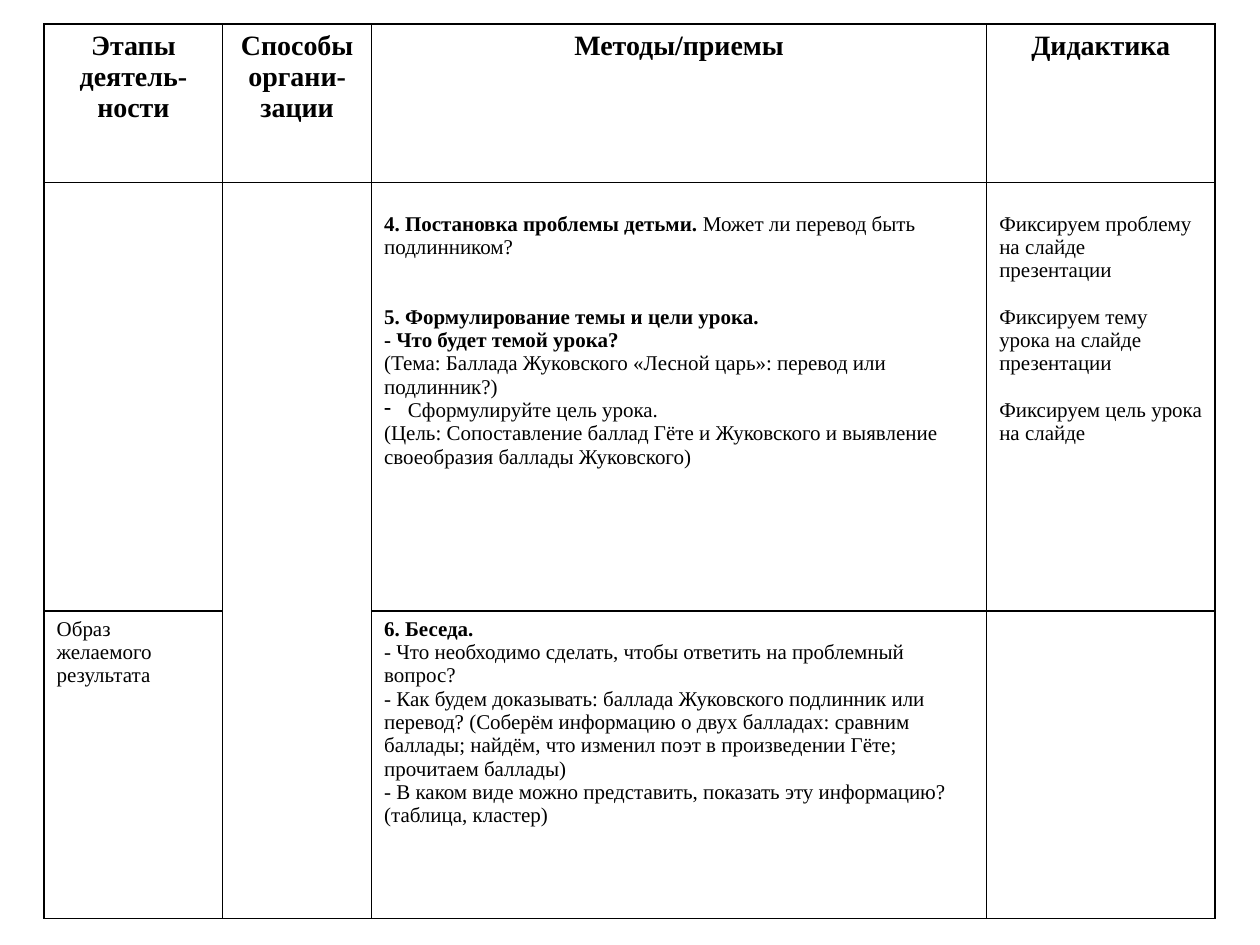
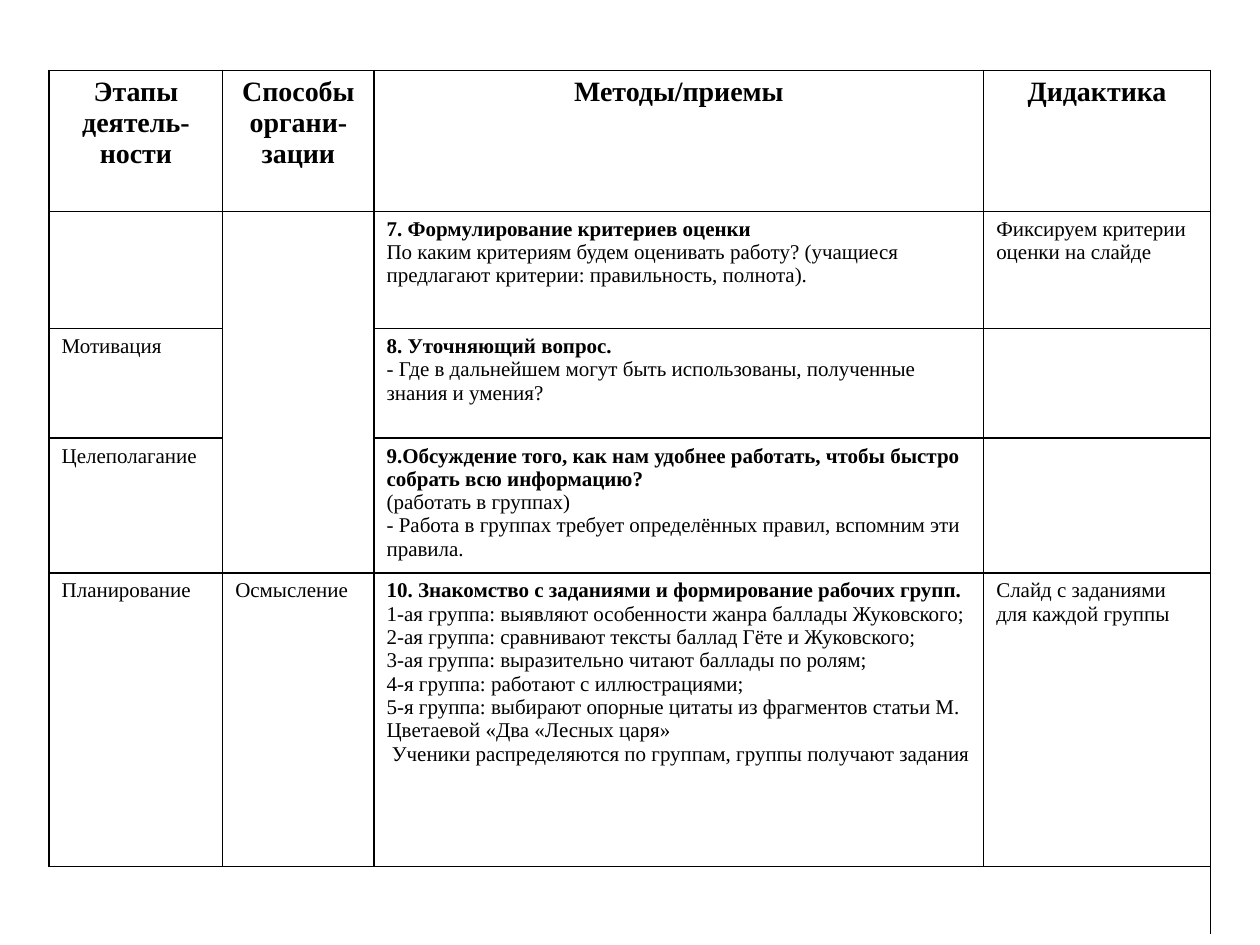
from typing import NamedTuple

from lxml import etree
from pptx import Presentation
from pptx.dml.color import RGBColor
from pptx.enum import text as t
from pptx.oxml import ns
from pptx.util import Cm, Pt

BLACK = RGBColor(0x00, 0x00, 0x00)
FACE = "Times New Roman"
HEAD_SIZE, BODY_SIZE = Pt(16), Pt(12)
LINE = 13.3
RULE = Pt(1)
DROP = Cm(0.6)
DASH = Cm(0.48)
HEADS = ["Этапы деятель-ности", "Способы органи-зации", "Методы/приемы", "Дидактика"]


class Para(NamedTuple):
    """A paragraph: bold parts stand between asterisks, gap counts lines above."""
    text: str
    gap: int = 0
    dash: bool = False


class Box(NamedTuple):
    """Place of a table with its column widths and row heights, in cm."""
    left: float
    top: float
    cols: list
    rows: list


GOAL_BOX = Box(0.89, 0.48, [3.6, 3, 12.4, 4.6], [3.2, 8.64, 6.2])
GOALS = [
    ["", "", [
        "*4. Постановка проблемы детьми.* Может ли перевод быть подлинником?",
        Para("*5. Формулирование темы и цели урока.*", gap=2),
        "*- Что будет темой урока?*",
        "(Тема: Баллада Жуковского «Лесной царь»: перевод или подлинник?)",
        Para("Сформулируйте цель урока.", dash=True),
        "(Цель: Сопоставление баллад Гёте и Жуковского и выявление "
        "своеобразия баллады Жуковского)",
    ], [
        "Фиксируем проблему на слайде презентации",
        Para("Фиксируем тему урока на слайде презентации", gap=1),
        Para("Фиксируем цель урока на слайде", gap=1),
    ]],
    ["Образ желаемого результата", "", [
        "*6. Беседа.*",
        "- Что необходимо сделать, чтобы ответить на проблемный вопрос?",
        "- Как будем доказывать: баллада Жуковского подлинник или перевод? "
        "(Соберём информацию о двух балладах: сравним баллады; найдём, что "
        "изменил поэт в произведении Гёте; прочитаем баллады)",
        "- В каком виде можно представить, показать эту информацию? "
        "(таблица, кластер)",
    ], ""],
]

PLAN_BOX = Box(0.99, 1.42, [3.5, 3.05, 12.29, 4.57],
               [2.84, 2.36, 2.21, 2.72, 5.92, 1.35])
PLANS = [
    ["", "", [
        "*7. Формулирование критериев оценки*",
        "По каким критериям будем оценивать работу? (учащиеся предлагают "
        "критерии: правильность, полнота).",
    ], "Фиксируем критерии оценки на слайде"],
    ["Мотивация", "", [
        "*8. Уточняющий вопрос.*",
        "- Где в дальнейшем могут быть использованы, полученные знания и умения?",
    ], ""],
    ["Целеполагание", "", [
        "*9.Обсуждение того, как нам удобнее работать, чтобы быстро собрать "
        "всю информацию?*",
        "(работать в группах)",
        "- Работа в группах требует определённых правил, вспомним эти правила.",
    ], ""],
    ["Планирование", "Осмысление", [
        "*10. Знакомство с заданиями и формирование рабочих групп.*",
        "1-ая группа: выявляют особенности жанра баллады Жуковского;",
        "2-ая группа: сравнивают тексты баллад Гёте и Жуковского;",
        "3-ая группа: выразительно читают баллады по ролям;",
        "4-я группа: работают с иллюстрациями;",
        "5-я группа: выбирают опорные цитаты из фрагментов статьи М. "
        "Цветаевой «Два «Лесных царя»",
        " Ученики распределяются по группам, группы получают задания",
    ], "Слайд с заданиями для каждой группы"],
    ["", "", "", ""],
]


def frame(cell, sides="LRTB"):
    """Rule the given sides of a cell and leave it unfilled."""
    props = cell._tc.get_or_add_tcPr()
    for side in "LRTB":
        shown = side in sides
        line = etree.SubElement(props, ns.qn(f"a:ln{side}"), w=str(RULE if shown else 0))
        fill = etree.SubElement(line, ns.qn("a:solidFill" if shown else "a:noFill"))
        if shown:
            etree.SubElement(fill, ns.qn("a:srgbClr"), val=str(BLACK))
    cell.fill.background()


def hang(par):
    """Give a paragraph a hanging dash."""
    props = par._p.get_or_add_pPr()
    props.set("marL", str(DASH))
    props.set("indent", str(-DASH))
    mark = etree.Element(ns.qn("a:buChar"), char="-")
    props.find(ns.qn("a:defRPr")).addprevious(mark)


def write(par, item, size):
    """Write one paragraph with its bold parts."""
    par.font.name, par.font.size = FACE, size
    par.font.color.rgb = BLACK
    if item.gap:
        par.space_before = Pt(item.gap * LINE)
    if item.dash:
        hang(par)
    parts = [(part, i % 2 == 1) for i, part in enumerate(item.text.split("*")) if part]
    same = len(parts) == 1
    for part, bold in parts:
        run = par.add_run()
        run.text = part
        (par if same else run).font.bold = bold


def fill_cell(cell, items, size=BODY_SIZE):
    """Write a string or a list of paragraphs into a cell."""
    items = [items] if isinstance(items, str) else items
    for i, item in enumerate(items):
        par = cell.text_frame.add_paragraph() if i else cell.text_frame.paragraphs[0]
        write(par, Para(item) if isinstance(item, str) else item, size)


def add_grid(slide, box, body):
    """Build a lesson table with the shared header row and return it."""
    grid = slide.shapes.add_table(
        len(box.rows), len(box.cols), Cm(box.left), Cm(box.top),
        Cm(sum(box.cols)), Cm(sum(box.rows))).table
    grid.first_row = grid.horz_banding = False
    for col, width in zip(grid.columns, box.cols):
        col.width = Cm(width)
    for row, height in zip(grid.rows, box.rows):
        row.height = Cm(height)
    for cell, head in zip(grid.rows[0].cells, HEADS):
        frame(cell)
        fill_cell(cell, f"*{head}*", HEAD_SIZE)
        cell.text_frame.paragraphs[0].alignment = t.PP_ALIGN.CENTER
    for r, line in enumerate(body, 1):
        for cell, items in zip(grid.rows[r].cells, line):
            frame(cell, "LRTB" if any(line) else "TR")
            fill_cell(cell, items)
    return grid


def goal_slide(slide):
    """Build the slide on the problem, the theme and the goal."""
    grid = add_grid(slide, GOAL_BOX, GOALS)
    grid.cell(1, 1).merge(grid.cell(2, 1))
    for col in (2, 3):
        grid.cell(1, col).margin_top = DROP


def plan_slide(slide):
    """Build the slide on criteria, motivation and planning."""
    grid = add_grid(slide, PLAN_BOX, PLANS)
    grid.cell(1, 1).merge(grid.cell(3, 1))
    grid.cell(5, 0).merge(grid.cell(5, 3))


def main():
    """Build and save the deck."""
    deck = Presentation()
    deck.slide_width, deck.slide_height = Cm(25.4), Cm(19.05)
    for build in (goal_slide, plan_slide):
        build(deck.slides.add_slide(deck.slide_layouts[6]))
    deck.save("out.pptx")


if __name__ == "__main__":
    main()
